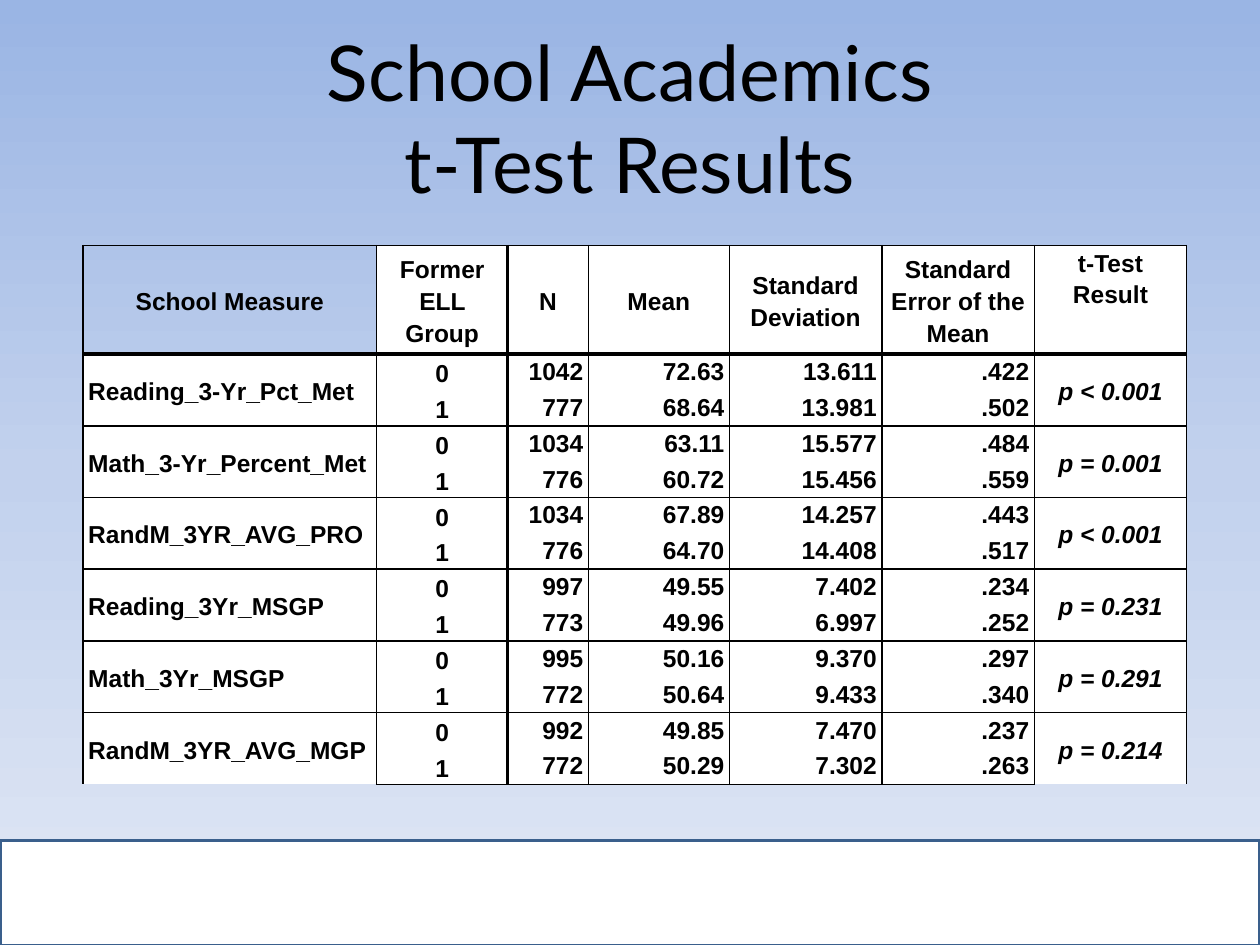
from copy import deepcopy

from lxml import etree
from pptx import Presentation
from pptx.dml.color import RGBColor
from pptx.enum.shapes import MSO_SHAPE
from pptx.enum.text import MSO_ANCHOR, PP_ALIGN
from pptx.oxml.ns import qn
from pptx.util import Inches, Pt

LEFT, CENTER, RIGHT = PP_ALIGN.LEFT, PP_ALIGN.CENTER, PP_ALIGN.RIGHT
TOP, MIDDLE = MSO_ANCHOR.TOP, MSO_ANCHOR.MIDDLE

# Content
TITLE = ["School Academics", "t-Test Results"]
HEADERS = ["School Measure", "Former ELL Group", "N", "Mean", "Standard Deviation",
           "Standard Error of the Mean", "t-Test Result"]
# Measure, statistics of group 0, statistics of group 1, test result
MEASURES = [
    ("Reading_3-Yr_Pct_Met", ("1042", "72.63", "13.611", ".422"),
     ("777", "68.64", "13.981", ".502"), "p < 0.001"),
    ("Math_3-Yr_Percent_Met", ("1034", "63.11", "15.577", ".484"),
     ("776", "60.72", "15.456", ".559"), "p = 0.001"),
    ("RandM_3YR_AVG_PRO", ("1034", "67.89", "14.257", ".443"),
     ("776", "64.70", "14.408", ".517"), "p < 0.001"),
    ("Reading_3Yr_MSGP", ("997", "49.55", "7.402", ".234"),
     ("773", "49.96", "6.997", ".252"), "p = 0.231"),
    ("Math_3Yr_MSGP", ("995", "50.16", "9.370", ".297"),
     ("772", "50.64", "9.433", ".340"), "p = 0.291"),
    ("RandM_3YR_AVG_MGP", ("992", "49.85", "7.470", ".237"),
     ("772", "50.29", "7.302", ".263"), "p = 0.214"),
]

THEME = {
    "background": [(0, "9AB5E4"), (0.5, "C2D1ED"), (1, "E1E8F5")],
    "white": "FFFFFF", "ink": "000000", "bar_line": "3A5F8C",
    "title_font": "Lato", "title_size": 44,
    "table_font": "Arial", "table_size": 14,
    "thin": 1, "thick": 2.25,
}
COL_WIDTHS = [2.33, 1.04, 0.64, 1.12, 1.21, 1.21, 1.21]
HEADER_HEIGHT, TABLE_HEIGHT = 0.86, 4.28
ROWS = 1 + 2 * len(MEASURES)
ROW_HEIGHT = (TABLE_HEIGHT - HEADER_HEIGHT) / (ROWS - 1)
GROUP_COL, RESULT_COL = 1, len(HEADERS) - 1


def rgb(name):
    return RGBColor.from_string(THEME[name])


def add_run(p, text, kind, bold=False, italic=False):
    r = p.add_run()
    r.text = text
    r.font.name = THEME[kind + "_font"]
    r.font.size = Pt(THEME[kind + "_size"])
    r.font.bold, r.font.italic = bold, italic
    r.font.color.rgb = rgb("ink")


def set_borders(cell, widths):
    """Widths in points for left, right, top and bottom; 0 means no line."""
    tc_pr = cell._tc.get_or_add_tcPr()
    for side, width in zip("LRTB", widths):
        ln = etree.SubElement(tc_pr, qn("a:ln" + side), w=str(int(Pt(width))))
        if width:
            fill = etree.SubElement(ln, qn("a:solidFill"))
            etree.SubElement(fill, qn("a:srgbClr"), val=THEME["ink"])
        else:
            etree.SubElement(ln, qn("a:noFill"))


def border_widths(row, col):
    """Thick rules go under the header and after the group column."""
    thin, thick = THEME["thin"], THEME["thick"]
    left = thick if col == GROUP_COL + 1 else thin
    right = thick if col == GROUP_COL else thin
    first_of_pair = row % 2 == 1
    top = thin if row == 0 else thick if row == 1 else thin if first_of_pair else 0
    bottom = thick if row == 0 else 0 if first_of_pair else thin
    return left, right, top, bottom


def write_cell(cell, text, align, anchor, indent=0.04, italic=False):
    cell.vertical_anchor = anchor
    p = cell.text_frame.paragraphs[0]
    p.alignment, p.line_spacing = align, 1.15
    for side in ("marL", "marR"):
        p._p.get_or_add_pPr().set(side, str(int(Inches(indent))))
    add_run(p, text, "table", bold=True, italic=italic)


prs = Presentation()
prs.slide_width, prs.slide_height = Inches(10), Inches(7.5)
s = prs.slides.add_slide(prs.slide_layouts[6])

# Background gradient, running downwards
fill = s.background.fill
fill.gradient()
fill.gradient_angle = 270
stop_list = s._element.find(".//" + qn("a:gsLst"))
stop_list.append(deepcopy(stop_list[-1]))
for stop, (position, color) in zip(fill.gradient_stops, THEME["background"]):
    stop.position = position
    stop.color.rgb = RGBColor.from_string(color)

# Footer bar
bar = s.shapes.add_shape(MSO_SHAPE.RECTANGLE, 0, Inches(6.67), prs.slide_width, Inches(0.84))
bar.shadow.inherit = False
bar.fill.solid()
bar.fill.fore_color.rgb = rgb("white")
bar.line.color.rgb = rgb("bar_line")
bar.line.width = Pt(2)

# Title
tf = s.shapes.add_textbox(Inches(0.5), Inches(0.3), Inches(9), Inches(1.25)).text_frame
tf.word_wrap = True
tf.vertical_anchor = MIDDLE
p = tf.paragraphs[0]
p.alignment = CENTER
for i, line in enumerate(TITLE):
    if i:
        p.add_line_break()
    add_run(p, line, "title")

# Table grid
table = s.shapes.add_table(ROWS, len(HEADERS), Inches(0.66), Inches(1.95),
                           Inches(sum(COL_WIDTHS)), Inches(TABLE_HEIGHT)).table
table.first_row = table.horz_banding = False
for column, width in zip(table.columns, COL_WIDTHS):
    column.width = Inches(width)
for i, row in enumerate(table.rows):
    row.height = Inches(ROW_HEIGHT if i else HEADER_HEIGHT)
    for j, cell in enumerate(row.cells):
        cell.margin_left = cell.margin_right = cell.margin_top = cell.margin_bottom = 0
        set_borders(cell, border_widths(i, j))
        if i == j == 0:
            cell.fill.background()
        else:
            cell.fill.solid()
            cell.fill.fore_color.rgb = rgb("white")

# Header row
for j, text in enumerate(HEADERS):
    write_cell(table.cell(0, j), text, CENTER, TOP if j == RESULT_COL else MIDDLE,
               indent=0.04 if j else 0)

# Two rows per measure
for k, (measure, *groups, result) in enumerate(MEASURES):
    top = 1 + 2 * k
    for j in (0, RESULT_COL):
        table.cell(top, j).merge(table.cell(top + 1, j))
    write_cell(table.cell(top, 0), measure, LEFT, MIDDLE)
    write_cell(table.cell(top, RESULT_COL), result, CENTER, MIDDLE, italic=True)
    for g, stats in enumerate(groups):
        write_cell(table.cell(top + g, GROUP_COL), str(g), CENTER, MIDDLE)
        for j, value in enumerate(stats, GROUP_COL + 1):
            write_cell(table.cell(top + g, j), value, RIGHT, TOP)

prs.save("out.pptx")
